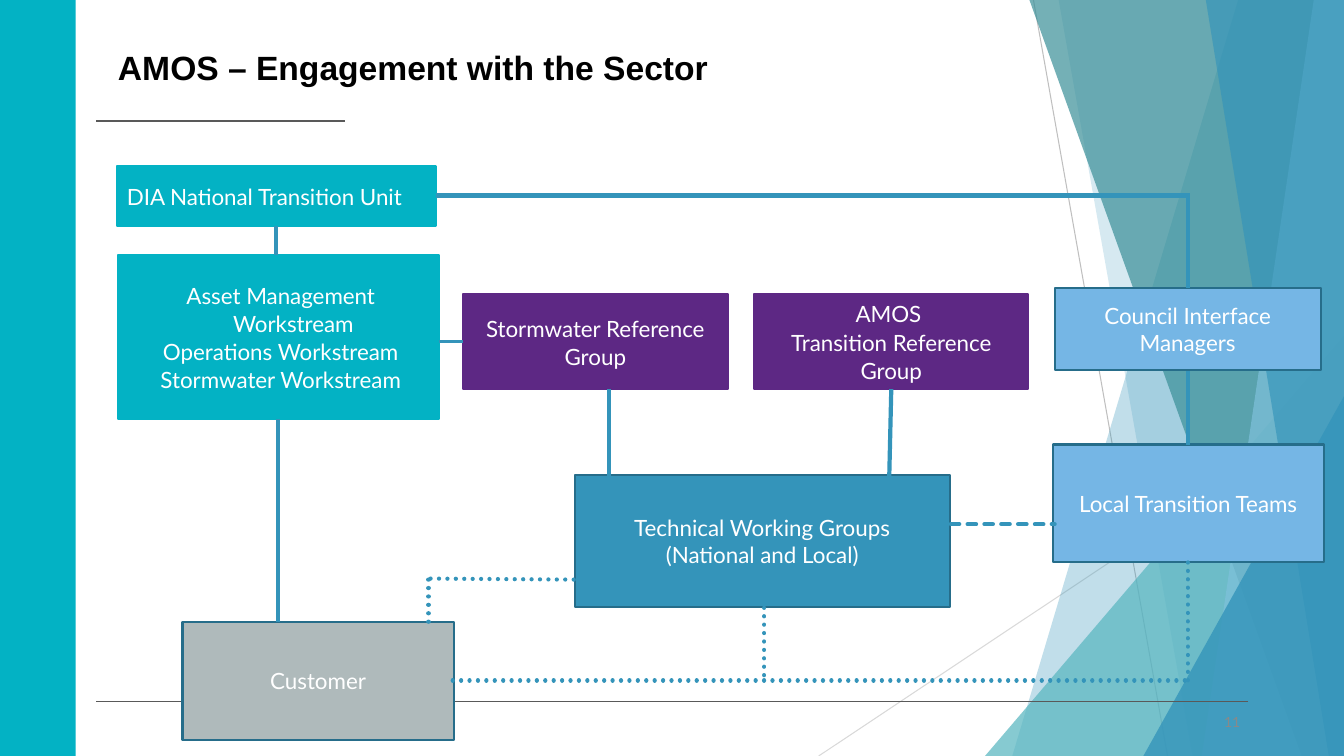
"""Build the AMOS sector engagement slide with its group structure diagram."""
import dataclasses

import pptx
import pptx.dml.color
import pptx.enum.dml
import pptx.enum.shapes
import pptx.enum.text
import pptx.oxml
import pptx.util

Inches = pptx.util.Inches
SHAPE = pptx.enum.shapes.MSO_SHAPE
ALIGN = pptx.enum.text.PP_ALIGN
ANCHOR = pptx.enum.text.MSO_ANCHOR
DASH = pptx.enum.dml.MSO_LINE
RGB = pptx.dml.color.RGBColor.from_string
NS = 'xmlns:a="http://schemas.openxmlformats.org/drawingml/2006/main"'


@dataclasses.dataclass(frozen=True)
class Theme:
    teal: str = "03B2C4"
    purple: str = "5D2884"
    blue: str = "3494BA"
    edge: str = "266D8A"
    sky: str = "75B6E5"
    pale: str = "7FC1DB"
    aqua: str = "58B6C0"
    deep: str = "3A8F98"
    silver: str = "AFBABB"
    rule: str = "595959"
    hairline: str = "BFBFBF"
    faint: str = "D9D9D9"
    number: str = "898989"
    white: str = "FFFFFF"
    black: str = "000000"
    heading: str = "Arial"
    body: str = "Lato"
    title_size: int = 24
    box_size: int = 16
    number_size: int = 10


theme = Theme()


def write_text(tf, text, *, size=theme.box_size, font=theme.body, color=theme.white,
               bold=False, align=ALIGN.CENTER, anchor=ANCHOR.MIDDLE, spacing=1.0,
               before=0, after=0, hanging=False):
    paragraphs = text.split("\n")
    tf.word_wrap = True
    tf.auto_size = pptx.enum.text.MSO_AUTO_SIZE.NONE
    tf.vertical_anchor = anchor
    for i, line in enumerate(paragraphs):
        p = tf.paragraphs[0] if i == 0 else tf.add_paragraph()
        p.text = line
        p.alignment = align
        p.line_spacing = spacing
        p.space_before = pptx.util.Pt(before if i == 0 else 0)
        p.space_after = pptx.util.Pt(after if i == len(paragraphs) - 1 else 0)
        if hanging:
            pPr = p._p.get_or_add_pPr()
            pPr.set("marL", str(Inches(0.3)))
            pPr.set("indent", str(Inches(-0.25)))
        for r in p.runs:
            r.font.size = pptx.util.Pt(size)
            r.font.name = font
            r.font.bold = bold
            r.font.color.rgb = RGB(color)


def draw_line(x1, y1, x2, y2, color=theme.blue, width=3, dash=None):
    s = slide.shapes.add_connector(pptx.enum.shapes.MSO_CONNECTOR.STRAIGHT,
                                   Inches(x1), Inches(y1), Inches(x2), Inches(y2))
    s.line.color.rgb = RGB(color)
    s.line.width = pptx.util.Pt(width)
    if dash:
        s.line.dash_style = dash
        s.line._ln.set("cap", "rnd")
    s._element.spPr.append(pptx.oxml.parse_xml(f"<a:effectLst {NS}/>"))


prs = pptx.Presentation()
prs.slide_width, prs.slide_height = Inches(13.33), Inches(7.5)
slide = prs.slides.add_slide(prs.slide_layouts[5])

title = slide.shapes.title
title.left, title.top, title.width, title.height = map(Inches, (1.07, 0.4, 6.6, 0.53))
write_text(title.text_frame, "AMOS – Engagement with the Sector", size=theme.title_size,
           font=theme.heading, color=theme.black, bold=True, align=ALIGN.LEFT)

draw_line(10.25, 0, 11.58, 7.5, theme.hairline, 0.75)
draw_line(13.33, 4.03, 8.12, 7.5, theme.faint, 0.75)

# Bands hold top and bottom x; triangles hold left and top.
facets = [
    ("band", 12.28, 10.04, theme.blue, 30),
    ("band", 10.5, 11.83, theme.blue, 20),
    ("triangle", 9.77, 3.33, theme.aqua, 72),
    ("band", 10.21, 12.91, theme.deep, 70),
    ("band", 13.03, 11.92, theme.pale, 70),
    ("band", 11.96, 13.18, theme.blue, 65),
    ("triangle", 11.34, 3.93, theme.blue, 80),
]
for kind, a, b, color, alpha in facets:
    if kind == "band":
        fb = slide.shapes.build_freeform(Inches(a), 0)
        fb.add_line_segments([(Inches(x), Inches(y)) for x, y in
                              ((13.33, 0), (13.33, 7.5), (b, 7.5))])
        s = fb.convert_to_shape()
    else:
        s = slide.shapes.add_shape(SHAPE.ISOSCELES_TRIANGLE, Inches(a), Inches(b),
                                   Inches(13.33 - a), Inches(7.5 - b))
        s.adjustments[0] = 1
    s.shadow.inherit = False
    s.fill.solid()
    s.fill.fore_color.rgb = RGB(color)
    s.line.fill.background()
    s.fill._xPr.solidFill[0].append(
        pptx.oxml.parse_xml(f'<a:alpha {NS} val="{alpha * 1000}"/>'))

number = slide.shapes.add_textbox(Inches(11.9), Inches(6.96), Inches(0.5), Inches(0.4))
write_text(number.text_frame, "11", size=theme.number_size, color=theme.number,
           align=ALIGN.RIGHT)

draw_line(3.42, 1.2, 0.95, 1.2, theme.rule, 1.5)
draw_line(12.38, 6.96, 0.95, 6.96, theme.rule, 0.5)

loose = dict(spacing=1.06, after=8)
boxes = [
    ("", 0, 0, 0.75, 7.5, theme.teal, None, {}),
    ("DIA National Transition Unit", 1.16, 1.65, 3.16, 0.59, theme.teal, theme.teal,
     dict(align=ALIGN.LEFT, **loose)),
    ("Asset Management Workstream\nOperations Workstream\nStormwater Workstream",
     1.17, 2.53, 3.18, 1.63, theme.teal, theme.teal,
     dict(spacing=1.05, before=6, after=6, hanging=True)),
    ("Stormwater Reference Group", 4.59, 2.92, 2.63, 0.94, theme.purple, theme.purple, loose),
    ("AMOS \vTransition Reference Group", 7.48, 2.92, 2.72, 0.94, theme.purple, theme.purple,
     loose),
    ("Council Interface Managers", 10.46, 2.86, 2.64, 0.81, theme.sky, theme.edge, {}),
    ("Local Transition Teams", 10.44, 4.41, 2.69, 1.17, theme.sky, theme.edge, {}),
    ("Technical Working Groups\n(National and Local)", 5.7, 4.71, 3.72, 1.31,
     theme.blue, theme.edge, {}),
    ("Customer", 1.81, 6.17, 2.69, 1.17, theme.silver, theme.edge, {}),
]
for text, x, y, w, h, fill, line, style in boxes:
    s = slide.shapes.add_shape(SHAPE.RECTANGLE, *map(Inches, (x, y, w, h)))
    s.shadow.inherit = False
    s.fill.solid()
    s.fill.fore_color.rgb = RGB(fill)
    if line:
        s.line.color.rgb = RGB(line)
        s.line.width = pptx.util.Pt(1.5)
        write_text(s.text_frame, text, **style)
    else:
        s.line.fill.background()

links = [
    (2.74, 2.24, 2.74, 2.53, 3, None),
    (2.76, 4.16, 2.76, 6.17, 3, None),
    (4.32, 1.94, 11.8, 1.94, 3, None),
    (11.78, 1.94, 11.78, 2.86, 3, None),
    (11.78, 3.68, 11.78, 4.41, 3, None),
    (4.35, 3.39, 4.59, 3.39, 2.25, None),
    (6.04, 3.86, 6.04, 4.73, 2.25, None),
    (8.84, 3.86, 8.82, 4.73, 3, None),
    (9.43, 5.2, 10.46, 5.2, 3, DASH.SQUARE_DOT),
    (5.69, 5.75, 4.25, 5.74, 3, DASH.ROUND_DOT),
    (4.25, 5.75, 4.25, 6.17, 3, DASH.ROUND_DOT),
    (4.49, 6.75, 11.8, 6.75, 3, DASH.ROUND_DOT),
    (11.78, 5.58, 11.78, 6.78, 3, DASH.ROUND_DOT),
    (7.58, 6.03, 7.58, 6.76, 3, DASH.ROUND_DOT),
]
for x1, y1, x2, y2, width, dash in links:
    draw_line(x1, y1, x2, y2, width=width, dash=dash)

prs.save("out.pptx")
